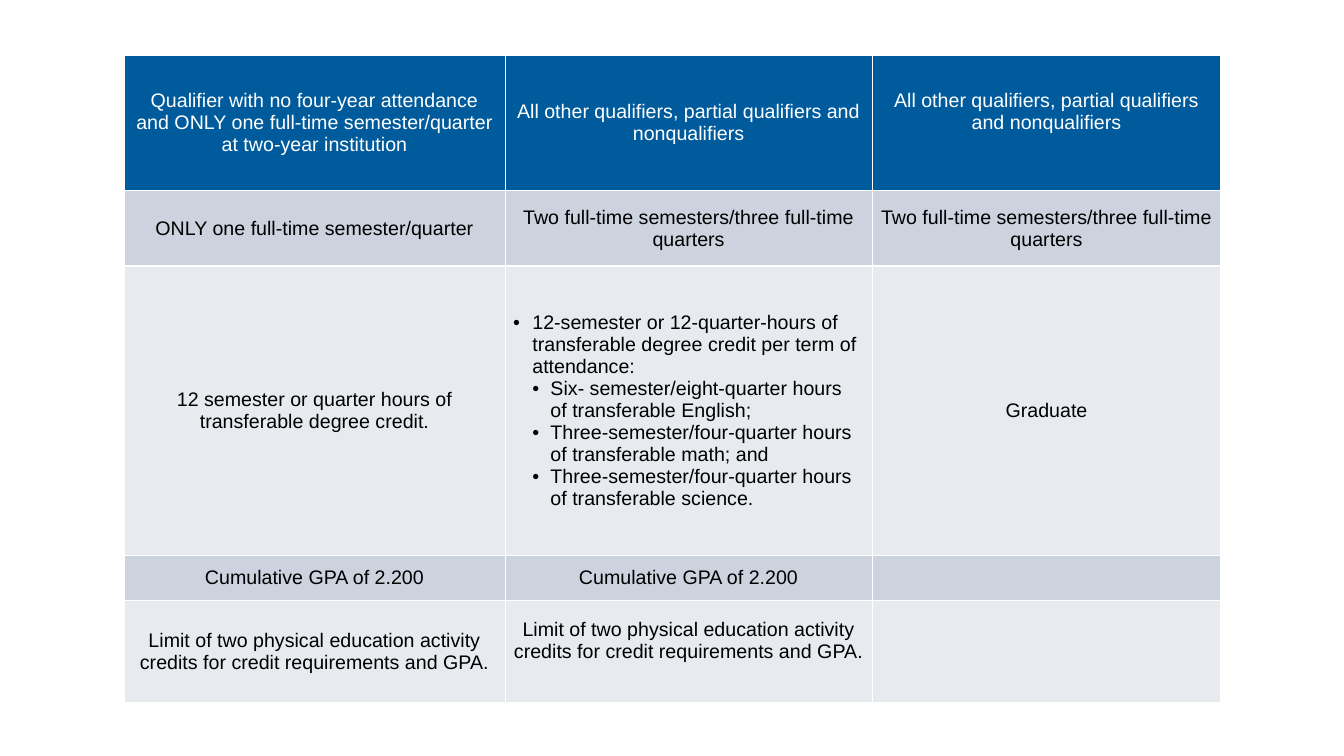
"""Build a slide with a table of transfer requirements for three groups of students."""
from dataclasses import dataclass

from lxml.etree import SubElement, fromstring
from pptx import Presentation
from pptx.dml.color import RGBColor
from pptx.enum.text import MSO_ANCHOR, PP_ALIGN
from pptx.oxml.ns import nsdecls, qn
from pptx.util import Inches, Pt


@dataclass(frozen=True)
class Theme:
    font: str = "Arial"
    size: int = 14
    border: str = "FFFFFF"
    border_width: int = 1
    header_fill: str = "005B9C"
    header_text: str = "FFFFFF"
    body_text: str = "000000"
    band_fills: tuple = ("E7EAEF", "CCD2DE")


theme = Theme()
COLUMN_WIDTHS = (3.78, 3.64, 3.46)
ROW_HEIGHTS = (1.34, 0.75, 2.87, 0.45, 1.01)
SIDE_MARGIN, END_MARGIN, RAISED_MARGIN = 0.08, 0.04, 0.26
RAISED_CELLS = {(0, 2), (4, 1)}
BULLET_INDENTS = ((0.19, -0.19), (0.37, -0.18))

OTHERS = "All other qualifiers, partial qualifiers and nonqualifiers"
TERMS = "Two full-time semesters/three full-time quarters"
GPA = "Cumulative GPA of 2.200"
LIMIT = "Limit of two physical education activity credits for credit requirements and GPA."
CREDITS = [
    (0, "12-semester or 12-quarter-hours of transferable degree credit per term of attendance:"),
    (1, "Six- semester/eight-quarter hours of transferable English;"),
    (1, "Three-semester/four-quarter hours of transferable math; and"),
    (1, "Three-semester/four-quarter hours of transferable science."),
]
ROWS = [
    ["Qualifier with no four-year attendance and ONLY one full-time semester/quarter "
     "at two-year institution", OTHERS, OTHERS],
    ["ONLY one full-time semester/quarter", TERMS, TERMS],
    ["12 semester or quarter hours of transferable degree credit.", CREDITS, "Graduate"],
    [GPA, GPA, ""],
    [LIMIT, LIMIT, ""],
]


def format_cell(cell, fill, bottom_margin):
    cell.vertical_anchor = MSO_ANCHOR.MIDDLE
    cell.margin_left = cell.margin_right = Inches(SIDE_MARGIN)
    cell.margin_top = Inches(END_MARGIN)
    cell.margin_bottom = Inches(bottom_margin)
    cell.fill.solid()
    cell.fill.fore_color.rgb = RGBColor.from_string(fill)
    properties = cell._tc.get_or_add_tcPr()
    for position, side in enumerate(("lnL", "lnR", "lnT", "lnB")):
        properties.insert(position, fromstring(
            f'<a:{side} {nsdecls("a")} w="{Pt(theme.border_width)}"><a:solidFill>'
            f'<a:srgbClr val="{theme.border}"/></a:solidFill></a:{side}>'))


def add_bullet(paragraph, level):
    paragraph.level = level
    margin, indent = BULLET_INDENTS[level]
    properties = paragraph._p.get_or_add_pPr()
    properties.set("marL", str(Inches(margin)))
    properties.set("indent", str(Inches(indent)))
    SubElement(properties, qn("a:buFont")).set("typeface", theme.font)
    SubElement(properties, qn("a:buChar")).set("char", "•")


presentation = Presentation()
presentation.slide_width = Inches(13.33)
presentation.slide_height = Inches(7.5)
slide = presentation.slides.add_slide(presentation.slide_layouts[6])

table = slide.shapes.add_table(
    len(ROW_HEIGHTS), len(COLUMN_WIDTHS), Inches(1.23), Inches(0.55),
    Inches(sum(COLUMN_WIDTHS)), Inches(sum(ROW_HEIGHTS))).table
for column, width in zip(table.columns, COLUMN_WIDTHS):
    column.width = Inches(width)
for row, height in zip(table.rows, ROW_HEIGHTS):
    row.height = Inches(height)

for row_index, contents in enumerate(ROWS):
    is_header = row_index == 0
    fill = theme.header_fill if is_header else theme.band_fills[row_index % 2]
    text_color = theme.header_text if is_header else theme.body_text
    for column_index, content in enumerate(contents):
        cell = table.cell(row_index, column_index)
        raised = (row_index, column_index) in RAISED_CELLS
        format_cell(cell, fill, RAISED_MARGIN if raised else END_MARGIN)
        if not content:
            continue
        bulleted = isinstance(content, list)
        items = content if bulleted else [(0, content)]
        for item_index, (level, text) in enumerate(items):
            frame = cell.text_frame
            paragraph = frame.add_paragraph() if item_index else frame.paragraphs[0]
            if bulleted:
                add_bullet(paragraph, level)
            paragraph.alignment = PP_ALIGN.LEFT if bulleted else PP_ALIGN.CENTER
            run = paragraph.add_run()
            run.text = text
            run.font.name = theme.font
            run.font.size = Pt(theme.size)
            run.font.bold = False
            run.font.color.rgb = RGBColor.from_string(text_color)

presentation.save("out.pptx")
